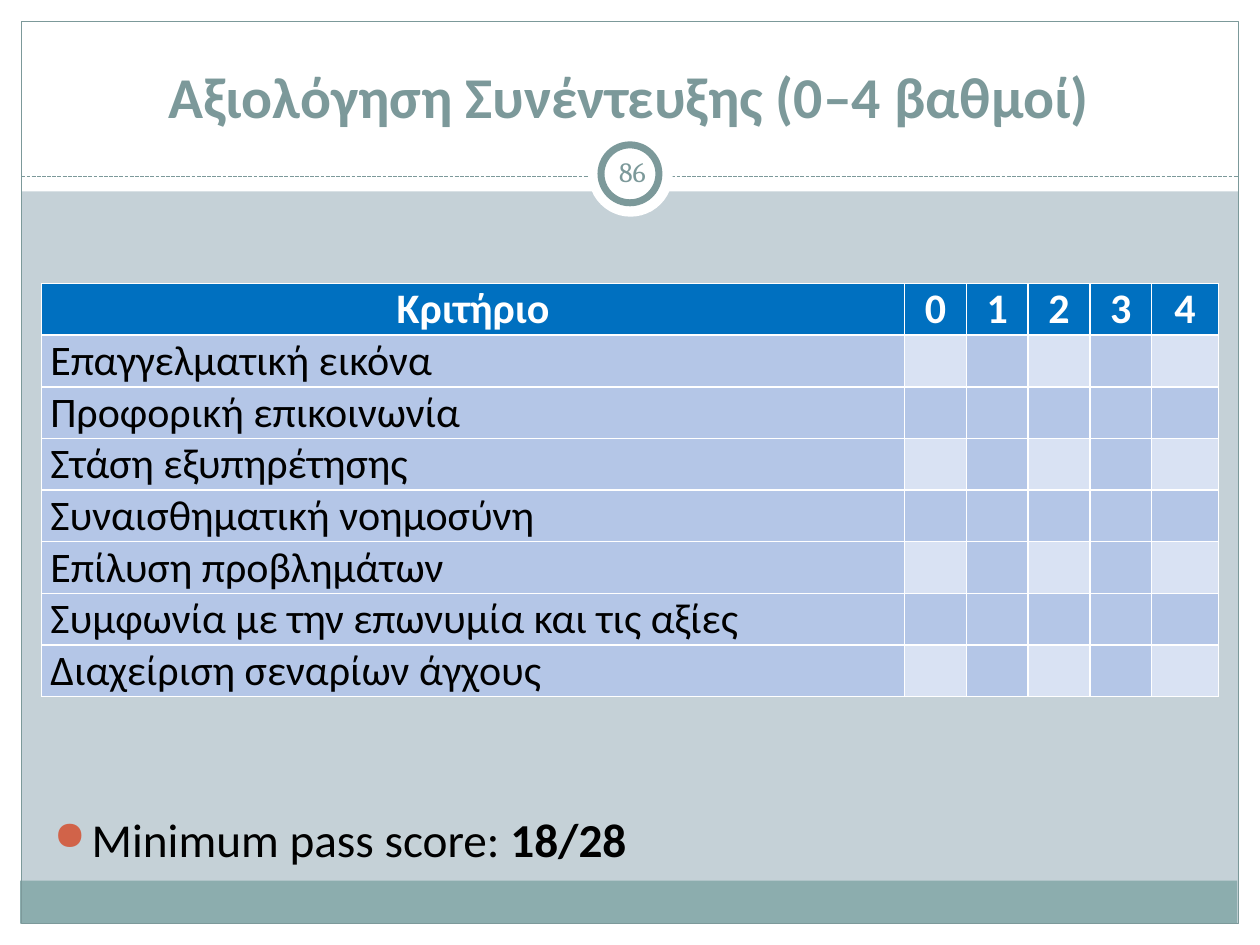
from lxml import etree
from pptx import Presentation
from pptx.dml.color import RGBColor
from pptx.enum.dml import MSO_LINE
from pptx.enum.shapes import MSO_CONNECTOR, MSO_SHAPE
from pptx.enum.text import MSO_ANCHOR, PP_ALIGN
from pptx.oxml.ns import qn
from pptx.util import Inches, Pt

RECT, OVAL = MSO_SHAPE.RECTANGLE, MSO_SHAPE.OVAL
STRAIGHT, SYS_DASH = MSO_CONNECTOR.STRAIGHT, MSO_LINE.SQUARE_DOT
CENTER, LEFT = PP_ALIGN.CENTER, PP_ALIGN.LEFT
TOP, MIDDLE, BOTTOM = MSO_ANCHOR.TOP, MSO_ANCHOR.MIDDLE, MSO_ANCHOR.BOTTOM

COLORS = {
    "background": "C5D1D7", "white": "FFFFFF", "black": "000000",
    "band": "8CADAE", "accent": "7C999A", "bullet": "D16349",
    "header": "0070C0", "cell": "B4C6E7", "light": "D9E2F3",
}
CRITERIA = [
    "Επαγγελματική εικόνα",
    "Προφορική επικοινωνία",
    "Στάση εξυπηρέτησης",
    "Συναισθηματική νοημοσύνη",
    "Επίλυση προβλημάτων",
    "Συμφωνία με την επωνυμία και τις αξίες",
    "Διαχείριση σεναρίων άγχους",
]
HEADERS = ["Κριτήριο", "0", "1", "2", "3", "4"]
COL_WIDTHS = [6.85, 0.49, 0.49, 0.49, 0.49, 0.53]
ROW_HEIGHT = 0.41


def rgb(name):
    return RGBColor.from_string(COLORS[name])


def add_shape(slide, kind, box, fill=None, line=None, width=0.75):
    sp = slide.shapes.add_shape(kind, *map(Inches, box))
    sp.shadow.inherit = False
    if fill:
        sp.fill.solid()
        sp.fill.fore_color.rgb = rgb(fill)
    else:
        sp.fill.background()
    if line:
        sp.line.color.rgb = rgb(line)
        sp.line.width = Pt(width)
    else:
        sp.line.fill.background()


def add_dashed_line(slide, x1, x2, y):
    line = slide.shapes.add_connector(STRAIGHT, *map(Inches, (x1, y, x2, y)))
    line.line.color.rgb = rgb("accent")
    line.line.width = Pt(0.75)
    line.line.dash_style = SYS_DASH
    etree.SubElement(line._element.spPr, qn("a:effectLst"))


def add_run(p, text, color, size, bold=False, name="Calibri"):
    r = p.add_run()
    r.text = text
    r.font.color.rgb = rgb(color)
    for key, value in {"size": Pt(size), "bold": bold, "name": name}.items():
        setattr(r.font, key, value)


def add_text(slide, box, align=LEFT, anchor=TOP, inset=(0.1, 0.05)):
    """Add an empty text box and return its first paragraph."""
    tf = slide.shapes.add_textbox(*map(Inches, box)).text_frame
    x, y = map(Inches, inset)
    layout = {"word_wrap": True, "vertical_anchor": anchor,
              "margin_left": x, "margin_right": x,
              "margin_top": y, "margin_bottom": y}
    for key, value in layout.items():
        setattr(tf, key, value)
    p = tf.paragraphs[0]
    p.alignment = align
    return p


def add_bullet(p):
    pPr = p._p.get_or_add_pPr()
    pPr.set("marL", str(Inches(0.3)))
    pPr.set("indent", str(-Inches(0.3)))
    color = etree.SubElement(pPr, qn("a:buClr"))
    etree.SubElement(color, qn("a:srgbClr"), val=COLORS["bullet"])
    etree.SubElement(pPr, qn("a:buSzPct"), val="85000")
    etree.SubElement(pPr, qn("a:buChar"), char="●")


def format_cell(cell, fill):
    """Set margins, white borders and fill."""
    for side, value in {"left": 0.07, "right": 0.07, "top": 0, "bottom": 0}.items():
        setattr(cell, f"margin_{side}", Inches(value))
    tcPr = cell._tc.get_or_add_tcPr()
    for tag in ("a:lnL", "a:lnR", "a:lnT", "a:lnB"):
        ln = etree.SubElement(tcPr, qn(tag), w=str(Pt(1)))
        solid = etree.SubElement(ln, qn("a:solidFill"))
        etree.SubElement(solid, qn("a:srgbClr"), val=COLORS["white"])
    cell.fill.solid()
    cell.fill.fore_color.rgb = rgb(fill)


def add_score_table(slide, left, top):
    rows = [HEADERS] + [[name] + [""] * 5 for name in CRITERIA]
    size = (sum(COL_WIDTHS), ROW_HEIGHT * len(rows))
    table = slide.shapes.add_table(
        len(rows), len(HEADERS), *map(Inches, (left, top, *size))).table
    for column, width in zip(table.columns, COL_WIDTHS):
        column.width = Inches(width)
    for i, row in enumerate(rows):
        for j, text in enumerate(row):
            cell = table.cell(i, j)
            is_header = i == 0
            checkered = "light" if i % 2 and j % 2 else "cell"
            format_cell(cell, "header" if is_header else checkered)
            if text:
                p = cell.text_frame.paragraphs[0]
                p.alignment = CENTER if is_header else LEFT
                p.line_spacing = 1.01
                add_run(p, text, "white" if is_header else "black", 24, is_header)


def add_frame(slide):
    """Draw the white margins, footer band, outline and number badge."""
    for box in ((0, 7.33, 10, 0.17), (0, 0, 10, 1.52),
                (0, 0, 0.17, 7.5), (9.83, 0, 0.17, 7.5)):
        add_shape(slide, RECT, box, "white")
    add_shape(slide, RECT, (0.16, 6.99, 9.66, 0.34), "band")
    add_shape(slide, RECT, (0.17, 0.17, 9.66, 7.16), line="accent")
    add_dashed_line(slide, 0.17, 9.83, 1.4)
    add_shape(slide, OVAL, (4.67, 1.05, 0.67, 0.67), "white")
    add_shape(slide, OVAL, (4.77, 1.15, 0.46, 0.46), "white", "accent", 4)


def main():
    prs = Presentation()
    prs.slide_width, prs.slide_height = Inches(10), Inches(7.5)
    s = prs.slides.add_slide(prs.slide_layouts[6])
    s.background.fill.solid()
    s.background.fill.fore_color.rgb = rgb("background")

    add_frame(s)
    title = add_text(s, (0.33, 0.25, 9.33, 0.83), CENTER, BOTTOM)
    add_run(title, "Αξιολόγηση Συνέντευξης (0–4 βαθμοί)", "accent", 33, True)

    score = add_text(s, (0.33, 6.38, 9.3, 0.63))
    add_bullet(score)
    add_run(score, "Minimum pass score: ", "black", 27)
    add_run(score, "18/28", "black", 27, True)

    number = add_text(s, (4.77, 1.12, 0.5, 0.48), CENTER, MIDDLE, (0.05, 0.05))
    add_run(number, "86", "accent", 16, name="Cambria")

    add_score_table(s, 0.33, 2.25)
    prs.save("out.pptx")


if __name__ == "__main__":
    main()
